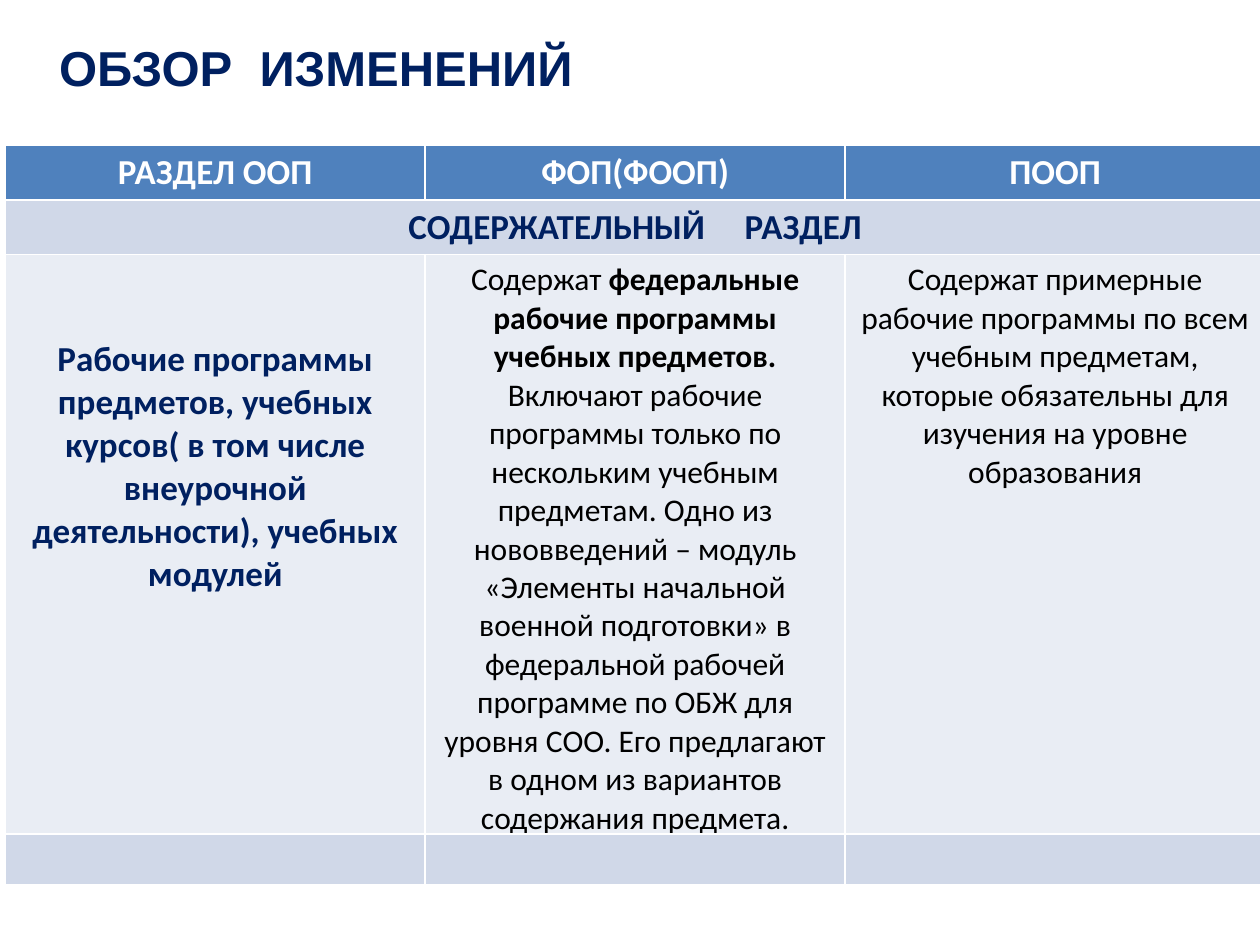
"""Build the slide that compares the sections of two education programmes."""
from dataclasses import dataclass
from typing import Any

from pptx import Presentation
from pptx import util as u
from pptx.dml.color import RGBColor
from pptx.enum import text

NAVY = RGBColor(0x00, 0x20, 0x60)
BLACK = RGBColor(0x00, 0x00, 0x00)
WHITE = RGBColor(0xFF, 0xFF, 0xFF)
HEADER_BLUE = RGBColor(0x4F, 0x81, 0xBD)
BAND_DARK = RGBColor(0xD0, 0xD8, 0xE8)
BAND_LIGHT = RGBColor(0xE9, 0xED, 0xF4)

COLUMN_WIDTH = u.Pt(240)
TABLE_HEIGHT = u.Pt(422.6)


@dataclass(frozen=True)
class Piece:
    words: str
    color: RGBColor = BLACK
    size: float = 18
    bold: bool = False
    font: str = "Calibri"


@dataclass(frozen=True)
class Entry:
    pieces: tuple[Piece, ...] = ()
    margin_top: float = 3.6


@dataclass(frozen=True)
class Row:
    height: float
    fill: RGBColor
    entries: tuple[Entry, ...]
    merged: bool = False


def heading(words: str, color: RGBColor, margin_top: float = 3.6) -> Entry:
    return Entry((Piece(words, color, 20, True),), margin_top)


ROWS = (
    Row(23, HEADER_BLUE, tuple(heading(words, WHITE) for words in ("РАЗДЕЛ ООП", "ФОП(ФООП)", "ПООП"))),
    Row(23, BAND_DARK, (heading("СОДЕРЖАТЕЛЬНЫЙ     РАЗДЕЛ", NAVY), Entry(), Entry()), merged=True),
    Row(135, BAND_LIGHT, (
        heading("Рабочие программы предметов, учебных курсов( в том числе внеурочной "
                "деятельности), учебных модулей", NAVY, margin_top=48),
        Entry((
            Piece("Содержат "),
            Piece("федеральные рабочие программы учебных предметов. ", bold=True),
            Piece("Включают рабочие программы только по нескольким учебным предметам. "
                  "Одно из нововведений – модуль «Элементы начальной военной подготовки» "
                  "в федеральной рабочей программе по ОБЖ для уровня СОО. "
                  "Его предлагают в одном из вариантов содержания предмета."),
        )),
        Entry((Piece("Содержат примерные рабочие программы по всем учебным предметам, "
                     "которые обязательны для изучения на уровне образования"),)),
    )),
    Row(23, BAND_DARK, (Entry(), Entry(), Entry())),
)


def apply(target: Any, values: dict[str, Any]) -> None:
    for name, value in values.items():
        setattr(target, name, value)


def write(paragraph: Any, pieces: tuple[Piece, ...], alignment: Any) -> None:
    paragraph.alignment = alignment
    for piece in pieces:
        run = paragraph.add_run()
        run.text = piece.words
        apply(run.font, {"name": piece.font, "size": u.Pt(piece.size), "bold": piece.bold})
        run.font.color.rgb = piece.color


def add_title(slide: Any) -> None:
    title = slide.shapes.title
    apply(title, {"left": u.Pt(26.6), "top": u.Pt(18), "width": u.Pt(666), "height": u.Pt(41)})
    apply(title.text_frame, {"word_wrap": True, "vertical_anchor": text.MSO_ANCHOR.TOP,
                             "auto_size": text.MSO_AUTO_SIZE.SHAPE_TO_FIT_TEXT})
    write(title.text_frame.paragraphs[0],
          (Piece("ОБЗОР  ИЗМЕНЕНИЙ", NAVY, 28, True, "Arial"),), text.PP_ALIGN.LEFT)


def add_comparison(slide: Any, rows: tuple[Row, ...]) -> None:
    columns = len(rows[0].entries)
    frame = slide.shapes.add_table(len(rows), columns, u.Pt(3), u.Pt(83),
                                   COLUMN_WIDTH * columns, TABLE_HEIGHT)
    table = frame.table
    for row_index, row in enumerate(rows):
        table.rows[row_index].height = u.Pt(row.height)
        for column_index, entry in enumerate(row.entries):
            cell = table.cell(row_index, column_index)
            cell.fill.solid()
            cell.fill.fore_color.rgb = row.fill
            cell.margin_top = u.Pt(entry.margin_top)
            write(cell.text_frame.paragraphs[0], entry.pieces, text.PP_ALIGN.CENTER)
        if row.merged:
            table.cell(row_index, 0).merge(table.cell(row_index, columns - 1))
    frame.height = TABLE_HEIGHT


def main() -> None:
    presentation = Presentation()
    apply(presentation, {"slide_width": u.Pt(720), "slide_height": u.Pt(540)})
    slide = presentation.slides.add_slide(presentation.slide_layouts[5])
    add_title(slide)
    add_comparison(slide, ROWS)
    presentation.save("out.pptx")


if __name__ == "__main__":
    main()
